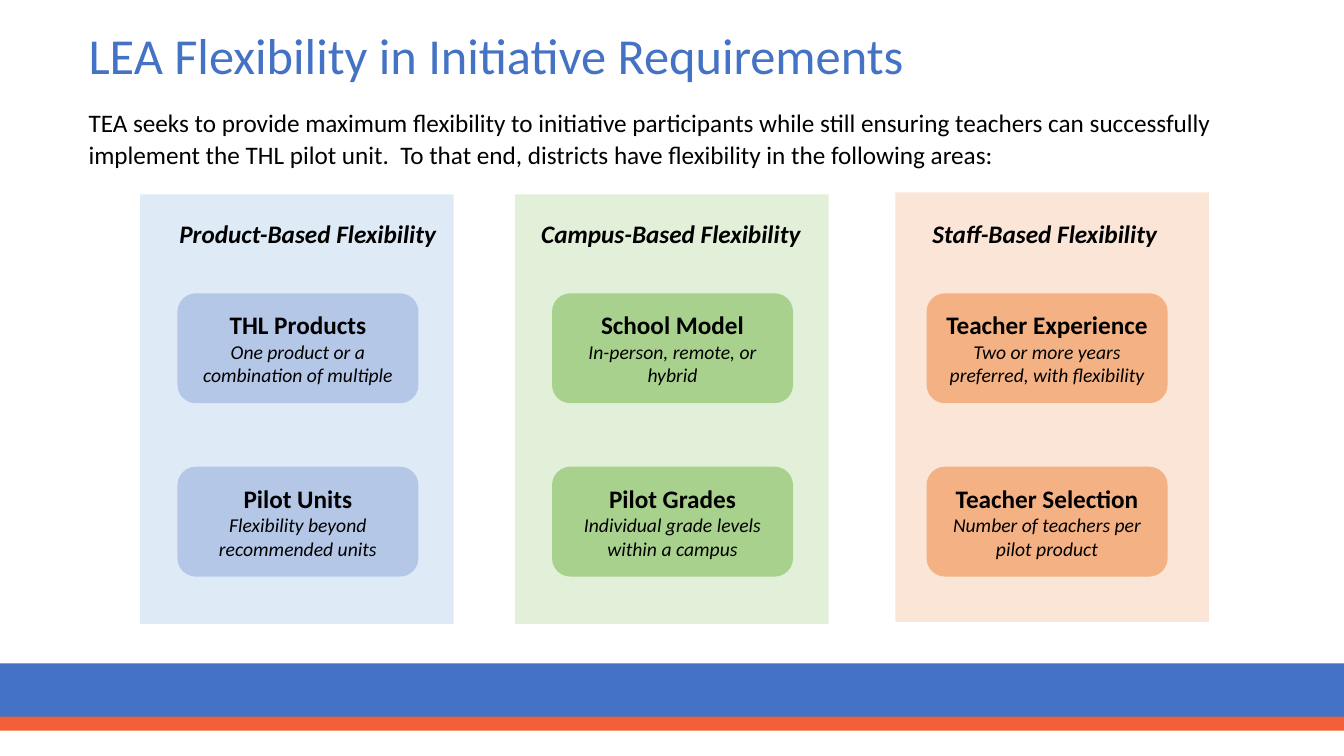
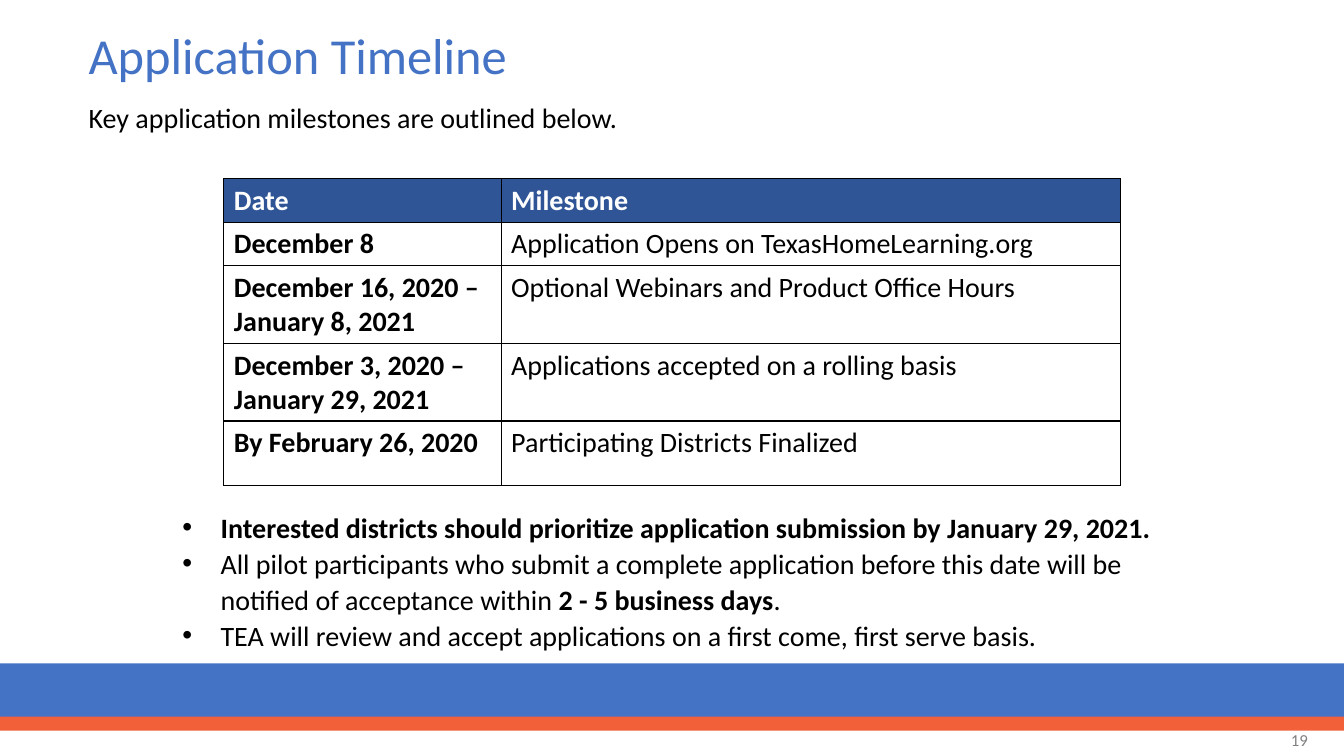
from dataclasses import dataclass

import lxml.etree
import pptx
import pptx.dml.color
import pptx.enum.shapes
import pptx.enum.text
import pptx.oxml.ns
import pptx.presentation
import pptx.shapes.autoshape
import pptx.slide
import pptx.table
import pptx.text.text
import pptx.util

Inches = pptx.util.Inches
RGBColor = pptx.dml.color.RGBColor
Align = pptx.enum.text.PP_ALIGN
Anchor = pptx.enum.text.MSO_ANCHOR
ShapeType = pptx.enum.shapes.MSO_SHAPE
qn = pptx.oxml.ns.qn

FONT = "Calibri"
BLUE = RGBColor(0x44, 0x72, 0xC4)
ORANGE = RGBColor(0xF1, 0x60, 0x38)
NAVY = RGBColor(0x2F, 0x55, 0x97)
BLACK = RGBColor(0x00, 0x00, 0x00)
WHITE = RGBColor(0xFF, 0xFF, 0xFF)
GRAY = RGBColor(0x80, 0x80, 0x80)
PALE_BLUE = RGBColor(0xDE, 0xEB, 0xF7)
PALE_GREEN = RGBColor(0xE2, 0xF0, 0xD9)
PALE_ORANGE = RGBColor(0xFB, 0xE5, 0xD6)
SOFT_BLUE = RGBColor(0xB4, 0xC7, 0xE7)
SOFT_GREEN = RGBColor(0xA9, 0xD1, 0x8E)
SOFT_ORANGE = RGBColor(0xF4, 0xB1, 0x83)

SLIDE_WIDTH = 13.33
TEXT_LEFT = 0.78
CARD_LEFT = 1.76
CARD_PITCH = 3.715
CARD_TOP = 2.91
CARD_STEP = 1.72


@dataclass(frozen=True)
class Box:
    left: float
    top: float
    width: float
    height: float

    def lengths(self) -> tuple[int, int, int, int]:
        return (Inches(self.left), Inches(self.top),
                Inches(self.width), Inches(self.height))


@dataclass(frozen=True)
class Style:
    size: float
    color: RGBColor = BLACK
    bold: bool = False
    italic: bool = False


@dataclass(frozen=True)
class Span:
    text: str
    bold: bool = False


@dataclass(frozen=True)
class Card:
    title: str
    detail: str


@dataclass(frozen=True)
class Column:
    heading: str
    panel: Box
    heading_box: Box
    panel_color: RGBColor
    card_color: RGBColor
    cards: tuple[Card, ...]


TITLE = Style(36, BLUE)
HEADING = Style(18, bold=True, italic=True)
CARD_TITLE = Style(18, bold=True)
CARD_DETAIL = Style(14, italic=True)

COLUMNS = (
    Column("Product-Based Flexibility", Box(1.39, 1.93, 3.11, 4.26),
           Box(1.68, 2.12, 2.78, 0.4), PALE_BLUE, SOFT_BLUE,
           (Card("THL Products", "One product or a combination of multiple"),
            Card("Pilot Units", "Flexibility beyond recommended units"))),
    Column("Campus-Based Flexibility", Box(5.11, 1.93, 3.11, 4.26),
           Box(5.27, 2.12, 2.8, 0.4), PALE_GREEN, SOFT_GREEN,
           (Card("School Model", "In-person, remote, or hybrid"),
            Card("Pilot Grades", "Individual grade levels within a campus"))),
    Column("Staff-Based Flexibility", Box(8.88, 1.91, 3.11, 4.26),
           Box(9.15, 2.12, 2.47, 0.4), PALE_ORANGE, SOFT_ORANGE,
           (Card("Teacher Experience",
                 "Two or more years preferred, with flexibility"),
            Card("Teacher Selection", "Number of teachers per pilot product"))),
)

MILESTONES = (
    ("Date", "Milestone"),
    ("December 8", "Application Opens on TexasHomeLearning.org"),
    ("December 16, 2020 – January 8, 2021",
     "Optional Webinars and Product Office Hours"),
    ("December 3, 2020 – January 29, 2021",
     "Applications accepted on a rolling basis"),
    ("By February 26, 2020", "Participating Districts Finalized"),
)
COLUMN_WIDTHS = (2.75, 6.14)
ROW_HEIGHTS = (0.43, 0.43, 0.77, 0.77, 0.64)

NOTES = (
    (Span("Interested districts should prioritize application submission "
          "by January 29, 2021.", True),),
    (Span("All pilot participants who submit a complete application before "
          "this date will be notified of acceptance within "),
     Span("2 - 5 business days", True), Span(".")),
    (Span("TEA will review and accept applications on a first come, "
          "first serve basis."),),
)


def style_font(font: pptx.text.text.Font, style: Style) -> None:
    font.name = FONT
    font.size = pptx.util.Pt(style.size)
    font.bold = style.bold
    font.italic = style.italic
    font.color.rgb = style.color


def style_paragraph(paragraph: pptx.text.text._Paragraph,
                    style: Style) -> None:
    for run in paragraph.runs:
        style_font(run.font, style)


def add_panel(slide: pptx.slide.Slide, box: Box, color: RGBColor,
              shape_type: ShapeType = ShapeType.RECTANGLE,
              ) -> pptx.shapes.autoshape.Shape:
    shape = slide.shapes.add_shape(shape_type, *box.lengths())
    shape.shadow.inherit = False
    shape.fill.solid()
    shape.fill.fore_color.rgb = color
    shape.line.fill.background()
    return shape


def add_text(slide: pptx.slide.Slide, box: Box, text: str, style: Style,
             line_spacing: float = 1.0, anchor: Anchor = Anchor.TOP,
             align: Align = Align.LEFT, wrap: bool = True) -> None:
    text_frame = slide.shapes.add_textbox(*box.lengths()).text_frame
    text_frame.word_wrap = wrap
    text_frame.vertical_anchor = anchor
    text_frame.text = text
    paragraph = text_frame.paragraphs[0]
    paragraph.line_spacing = line_spacing
    paragraph.alignment = align
    style_paragraph(paragraph, style)


def add_base_slide(presentation: pptx.presentation.Presentation,
                   title: str) -> pptx.slide.Slide:
    slide = presentation.slides.add_slide(presentation.slide_layouts[6])
    add_panel(slide, Box(0, 6.58, SLIDE_WIDTH, 0.58), BLUE)
    add_panel(slide, Box(0, 7.11, SLIDE_WIDTH, 0.14), ORANGE)
    add_text(slide, Box(TEXT_LEFT, 0.17, 12.16, 0.82), title, TITLE,
             line_spacing=0.9, anchor=Anchor.MIDDLE)
    return slide


def add_card(slide: pptx.slide.Slide, box: Box, card: Card,
             color: RGBColor) -> None:
    shape = add_panel(slide, box, color, ShapeType.ROUNDED_RECTANGLE)
    text_frame = shape.text_frame
    text_frame.word_wrap = True
    text_frame.vertical_anchor = Anchor.MIDDLE
    text_frame.text = f"{card.title}\n{card.detail}"
    for paragraph, style in zip(text_frame.paragraphs,
                                (CARD_TITLE, CARD_DETAIL)):
        paragraph.alignment = Align.CENTER
        style_paragraph(paragraph, style)


def add_column(slide: pptx.slide.Slide, index: int, column: Column) -> None:
    add_panel(slide, column.panel, column.panel_color)
    add_text(slide, column.heading_box, column.heading, HEADING, wrap=False)
    for row, card in enumerate(column.cards):
        box = Box(CARD_LEFT + index * CARD_PITCH, CARD_TOP + row * CARD_STEP,
                  2.39, 1.09)
        add_card(slide, box, card, column.card_color)


def add_borders(cell: pptx.table._Cell) -> None:
    properties = cell._tc.get_or_add_tcPr()
    for position, side in enumerate(("a:lnL", "a:lnR", "a:lnT", "a:lnB")):
        line = lxml.etree.Element(qn(side), w=str(pptx.util.Pt(1)))
        fill = lxml.etree.SubElement(line, qn("a:solidFill"))
        lxml.etree.SubElement(fill, qn("a:srgbClr"), val=str(BLACK))
        properties.insert(position, line)


def add_milestone_table(slide: pptx.slide.Slide) -> None:
    box = Box(2.22, 1.77, sum(COLUMN_WIDTHS), sum(ROW_HEIGHTS))
    table = slide.shapes.add_table(len(MILESTONES), len(COLUMN_WIDTHS),
                                   *box.lengths()).table
    table.horz_banding = False
    for column, width in zip(table.columns, COLUMN_WIDTHS):
        column.width = Inches(width)
    for row_index, texts in enumerate(MILESTONES):
        table.rows[row_index].height = Inches(ROW_HEIGHTS[row_index])
        is_header = row_index == 0
        for column_index, text in enumerate(texts):
            cell = table.cell(row_index, column_index)
            cell.fill.solid()
            cell.fill.fore_color.rgb = NAVY if is_header else WHITE
            add_borders(cell)
            cell.text_frame.text = text
            style_paragraph(cell.text_frame.paragraphs[0],
                            Style(20, WHITE if is_header else BLACK,
                                  bold=is_header or column_index == 0))


def set_bullet(paragraph: pptx.text.text._Paragraph) -> None:
    properties = paragraph._p.get_or_add_pPr()
    properties.set("marL", str(Inches(0.38)))
    properties.set("indent", str(Inches(-0.38)))
    lxml.etree.SubElement(properties, qn("a:buFont"), typeface="Arial")
    lxml.etree.SubElement(properties, qn("a:buChar"), char="•")


def add_notes_list(slide: pptx.slide.Slide) -> None:
    box = Box(1.71, 4.99, 10.3, 1.53)
    text_frame = slide.shapes.add_textbox(*box.lengths()).text_frame
    text_frame.word_wrap = True
    for index, spans in enumerate(NOTES):
        paragraph = (text_frame.add_paragraph() if index
                     else text_frame.paragraphs[0])
        set_bullet(paragraph)
        paragraph.line_spacing = 1.07
        for span in spans:
            run = paragraph.add_run()
            run.text = span.text
            style_font(run.font, Style(20, bold=span.bold))


def build_flexibility_slide(
        presentation: pptx.presentation.Presentation) -> None:
    slide = add_base_slide(presentation,
                           "LEA Flexibility in Initiative Requirements")
    add_text(slide, Box(TEXT_LEFT, 0.99, 12.16, 0.73),
             "TEA seeks to provide maximum flexibility to initiative "
             "participants while still ensuring teachers can successfully "
             "implement the THL pilot unit.  To that end, districts have "
             "flexibility in the following areas:", Style(18),
             line_spacing=1.07)
    for index, column in enumerate(COLUMNS):
        add_column(slide, index, column)


def build_timeline_slide(
        presentation: pptx.presentation.Presentation) -> None:
    slide = add_base_slide(presentation, "Application Timeline")
    add_text(slide, Box(10.07, 7.14, 3, 0.4), "19", Style(12, GRAY),
             anchor=Anchor.MIDDLE, align=Align.RIGHT)
    add_text(slide, Box(TEXT_LEFT, 0.95, 11.14, 0.44),
             "Key application milestones are outlined below.", Style(20))
    add_milestone_table(slide)
    add_notes_list(slide)


def main() -> None:
    presentation = pptx.Presentation()
    presentation.slide_width = Inches(SLIDE_WIDTH)
    presentation.slide_height = Inches(7.5)
    build_flexibility_slide(presentation)
    build_timeline_slide(presentation)
    presentation.save("out.pptx")


if __name__ == "__main__":
    main()
